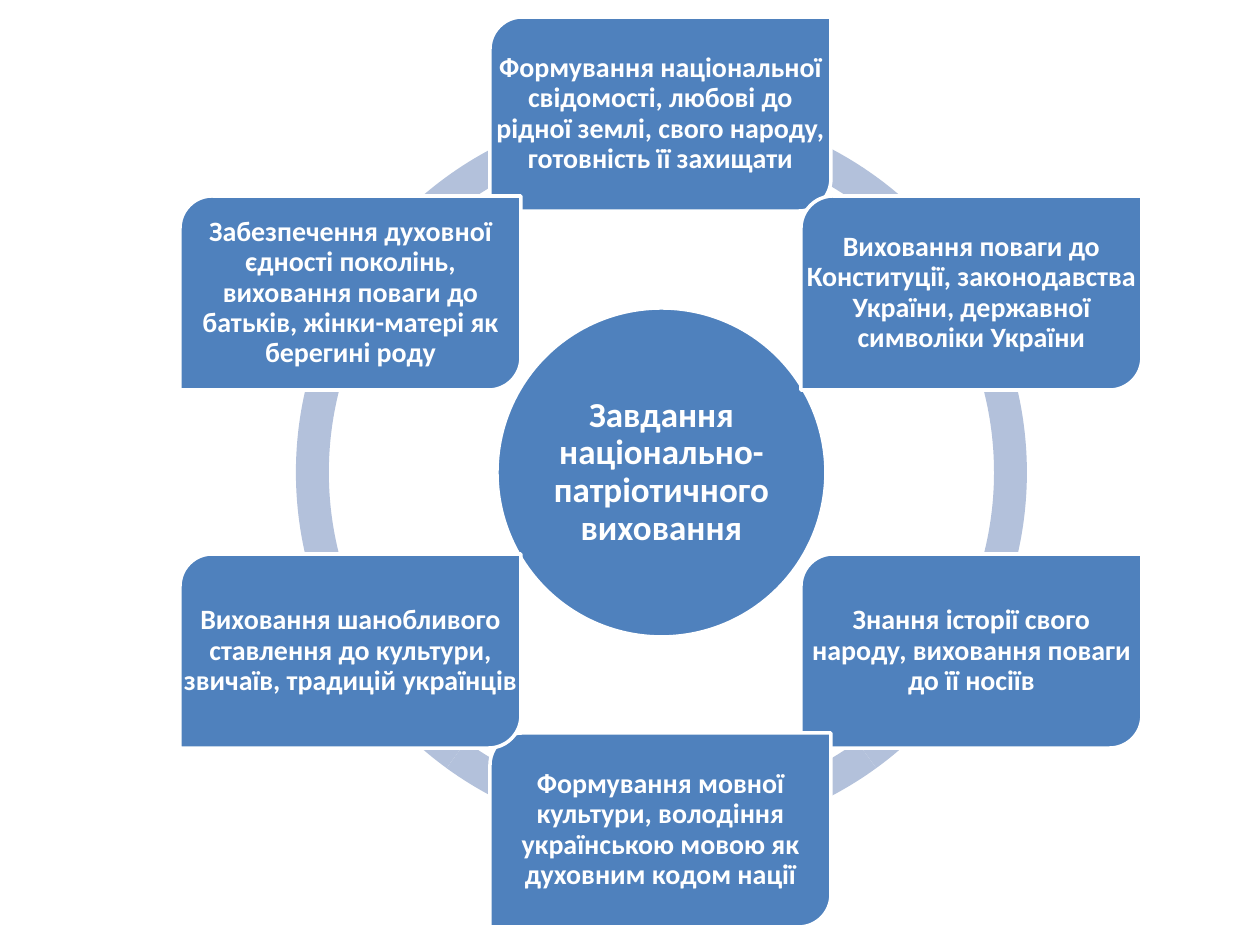
"""Build a radial diagram: six tasks around the aim of national-patriotic education."""
from math import cos, radians, sin

from pptx import Presentation
from pptx.dml.color import RGBColor
from pptx.enum.shapes import MSO_SHAPE
from pptx.enum.text import MSO_ANCHOR, PP_ALIGN
from pptx.util import Emu, Pt

PX = 914400 // 126
CENTER_X, CENTER_Y = 661, 472
RING_SIZE, HUB_SIZE, ORBIT = 731, 329, 358
CARD_WIDTH, CARD_HEIGHT = 341, 194
BLUE, PALE_BLUE, WHITE = "4F81BD", "B3C1DB", "FFFFFF"

presentation = Presentation()
presentation.slide_width, presentation.slide_height = Emu(1260 * PX), Emu(945 * PX)
slide = presentation.slides.add_slide(presentation.slide_layouts[6])


def add_figure(preset, box, fill, outlined=True):
    figure = slide.shapes.add_shape(preset, *box)
    figure.shadow.inherit = False
    figure.fill.solid()
    figure.fill.fore_color.rgb = RGBColor.from_string(fill)
    if outlined:
        figure.line.color.rgb = RGBColor.from_string(WHITE)
        figure.line.width = Pt(2)
    else:
        figure.line.fill.background()
    return figure


def add_label(text, *, box, size, inset, color=WHITE):
    frame = slide.shapes.add_textbox(*box).text_frame
    frame.word_wrap = True
    frame.vertical_anchor = MSO_ANCHOR.MIDDLE
    frame.margin_left = frame.margin_right = Emu(inset * PX)
    frame.margin_top = frame.margin_bottom = Emu(inset * PX)
    paragraph = frame.paragraphs[0]
    paragraph.alignment = PP_ALIGN.CENTER
    paragraph.line_spacing = 0.9
    run = paragraph.add_run()
    run.text = text
    run.font.name = "Calibri"
    run.font.size = Pt(size)
    run.font.bold = True
    run.font.color.rgb = RGBColor.from_string(color)


ring_box = [Emu(v * PX) for v in (CENTER_X - RING_SIZE // 2, CENTER_Y - RING_SIZE // 2,
                                  RING_SIZE, RING_SIZE)]
for start, end in [(126, 162), (90, 126), (54, 90), (18, 54), (198, 18), (162, 198)]:
    arc = add_figure(MSO_SHAPE.BLOCK_ARC, ring_box, PALE_BLUE, outlined=False)
    arc.adjustments[0] = start * 0.6
    arc.adjustments[1] = end * 0.6
    arc.adjustments[2] = 0.045

hub_box = [Emu(v * PX) for v in (CENTER_X - HUB_SIZE // 2, CENTER_Y - HUB_SIZE // 2,
                                 HUB_SIZE, HUB_SIZE)]
add_figure(MSO_SHAPE.OVAL, hub_box, BLUE)
add_label("Завдання національно-патріотичного виховання", box=hub_box, size=20, inset=4)

tasks = [
    "Формування національної свідомості, любові до рідної землі, свого народу, готовність її захищати",
    "Виховання поваги до Конституції, законодавства України, державної символіки України",
    "Знання історії свого народу, виховання поваги до її носіїв",
    "Формування мовної культури, володіння українською мовою як духовним кодом нації",
    "Виховання шанобливого ставлення до культури, звичаїв, традицій українців",
    "Забезпечення духовної єдності поколінь, виховання поваги до батьків, жінки-матері як берегині роду",
]
for index, task in enumerate(tasks):
    angle = radians(360 / len(tasks) * index)
    left = round(CENTER_X + ORBIT * sin(angle) - CARD_WIDTH / 2)
    top = round(CENTER_Y - ORBIT * cos(angle) - CARD_HEIGHT / 2)
    card_box = [Emu(v * PX) for v in (left, top, CARD_WIDTH, CARD_HEIGHT)]
    add_figure(MSO_SHAPE.ROUND_2_DIAG_RECTANGLE, card_box, BLUE)
    add_label(task, box=card_box, size=16, inset=2)

presentation.save("out.pptx")
